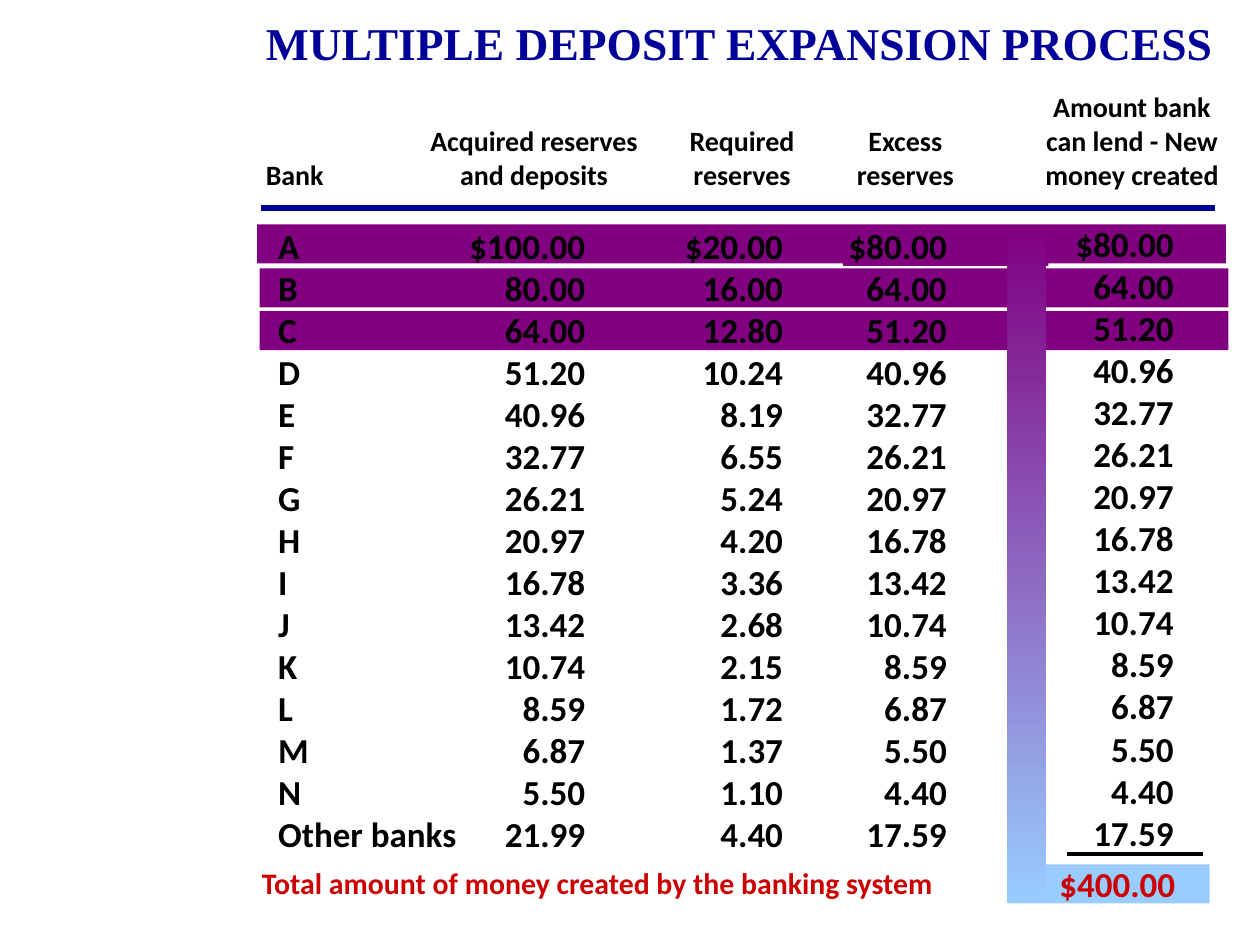
from lxml.etree import SubElement
from pptx import Presentation
from pptx.dml.color import RGBColor
from pptx.enum.shapes import MSO_CONNECTOR as Connector, MSO_SHAPE as Shape
from pptx.enum.text import MSO_ANCHOR as Anchor, MSO_AUTO_SIZE as AutoSize, PP_ALIGN as Align
from pptx.oxml.ns import qn
from pptx.util import Pt

COLORS = {"navy": "000099", "purple": "800080", "sky": "99CCFF",
          "black": "000000", "red": "CC0000"}


def color(name):
    return RGBColor.from_string(COLORS[name])


def write(box, text, size=20, font="Calibri", ink="black", align=Align.LEFT,
          wrap=False, left=7.2, right=7.2):
    frame = box.text_frame
    frame.word_wrap = wrap
    frame.auto_size = AutoSize.NONE
    frame.vertical_anchor = Anchor.TOP
    frame.margin_left, frame.margin_right = Pt(left), Pt(right)
    frame.margin_top = frame.margin_bottom = Pt(3.6)
    frame.text = text
    for para in frame.paragraphs:
        para.alignment = align
        para.font.name = font
        para.font.size = Pt(size)
        para.font.bold = True
        para.font.color.rgb = color(ink)


deck = Presentation()
deck.slide_width, deck.slide_height = Pt(720), Pt(540)
page = deck.slides.add_slide(deck.slide_layouts[5])
shapes = page.shapes

# Title
title = shapes.title
title.left, title.top, title.width, title.height = Pt(144.7), Pt(5), Pt(560), Pt(38)
write(title, "MULTIPLE DEPOSIT EXPANSION PROCESS", size=26,
      font="Times New Roman", ink="navy")

# Bands behind the first three banks, and the total
for left, top, width, fill in [
    (148.3, 177.8, 553.7, "purple"),
    (148.3, 153.4, 553.7, "purple"),
    (146.9, 128.2, 553.7, "purple"),
    (481.7, 129.6, 117.4, "purple"),
    (576.7, 493.9, 114.5, "sky"),
]:
    band = shapes.add_shape(Shape.RECTANGLE, Pt(left), Pt(top), Pt(width), Pt(22.3))
    band.shadow.inherit = False
    band.fill.solid()
    band.fill.fore_color.rgb = color(fill)
    band.line.fill.background()

# Column headings, all ending on the same bottom line
for text, left, width in [
    ("Bank", 141.8, 53.3),
    ("Acquired reserves\nand deposits", 228.2, 154.1),
    ("Required\nreserves", 382.3, 83.5),
    ("Excess\nreserves", 477.4, 79.9),
    ("Amount bank\ncan lend - New\nmoney created", 583.2, 127.4),
]:
    height = 7.2 + 19.2 * len(text.split("\n"))
    box = shapes.add_textbox(Pt(left), Pt(112.7 - height), Pt(width), Pt(height))
    write(box, text, size=16, align=Align.CENTER)

# Rules under the headings and above the total
for start, end, y, ink, weight in [(149, 694.1, 118.8, "navy", 3),
                                   (609.8, 687.6, 488.2, "black", 2.25)]:
    rule = shapes.add_connector(Connector.STRAIGHT, Pt(start), Pt(y), Pt(end), Pt(y))
    rule.line.color.rgb = color(ink)
    rule.line.width = Pt(weight)
    SubElement(rule._element.spPr, qn("a:effectLst"))

# Bank names
banks = [*"ABCDEFGHIJKLMN", "Other banks"]
names = shapes.add_textbox(Pt(151.9), Pt(124.6), Pt(131), Pt(367.2))
write(names, "\n".join(banks))

# Amounts: each bank's new deposit is the excess reserve of the one before
excess = ["$80.00", "64.00", "51.20", "40.96", "32.77", "26.21", "20.97", "16.78",
          "13.42", "10.74", "8.59", "6.87", "5.50", "4.40", "17.59"]
acquired = ["$100.00", "80.00", *excess[1:13], "21.99"]
required = ["$20.00", "16.00", "12.80", "10.24", "8.19", "6.55", "5.24", "4.20",
            "3.36", "2.68", "2.15", "1.72", "1.37", "1.10", "4.40"]
for amounts, left, top, width in [
    (acquired, 262.1, 124.6, 86.4),
    (required, 385.9, 124.6, 75.6),
    (excess, 479.5, 124.6, 75.6),
    (excess, 609.1, 123.8, 75.6),
]:
    column = shapes.add_textbox(Pt(left), Pt(top), Pt(width), Pt(367.2))
    write(column, "\n".join(amounts), align=Align.RIGHT, wrap=True, left=0, right=14)

# Total amount
total = shapes.add_textbox(Pt(598.3), Pt(489.6), Pt(86.4), Pt(31))
write(total, "$400.00", ink="red")

# Gradient bar running down to the total
bar = shapes.add_shape(Shape.RECTANGLE, Pt(575.6), Pt(130), Pt(22.3), Pt(385.9))
bar.shadow.inherit = False
bar.line.fill.background()
bar.fill.gradient()
bar.fill.gradient_angle = 270
for stop, ink in zip(bar.fill.gradient_stops, ["purple", "sky"]):
    stop.color.rgb = color(ink)

# Total label
label = shapes.add_textbox(Pt(142.6), Pt(490.3), Pt(455), Pt(27.4))
write(label, "Total amount of money created by the banking system", size=17, ink="red")

deck.save("out.pptx")
